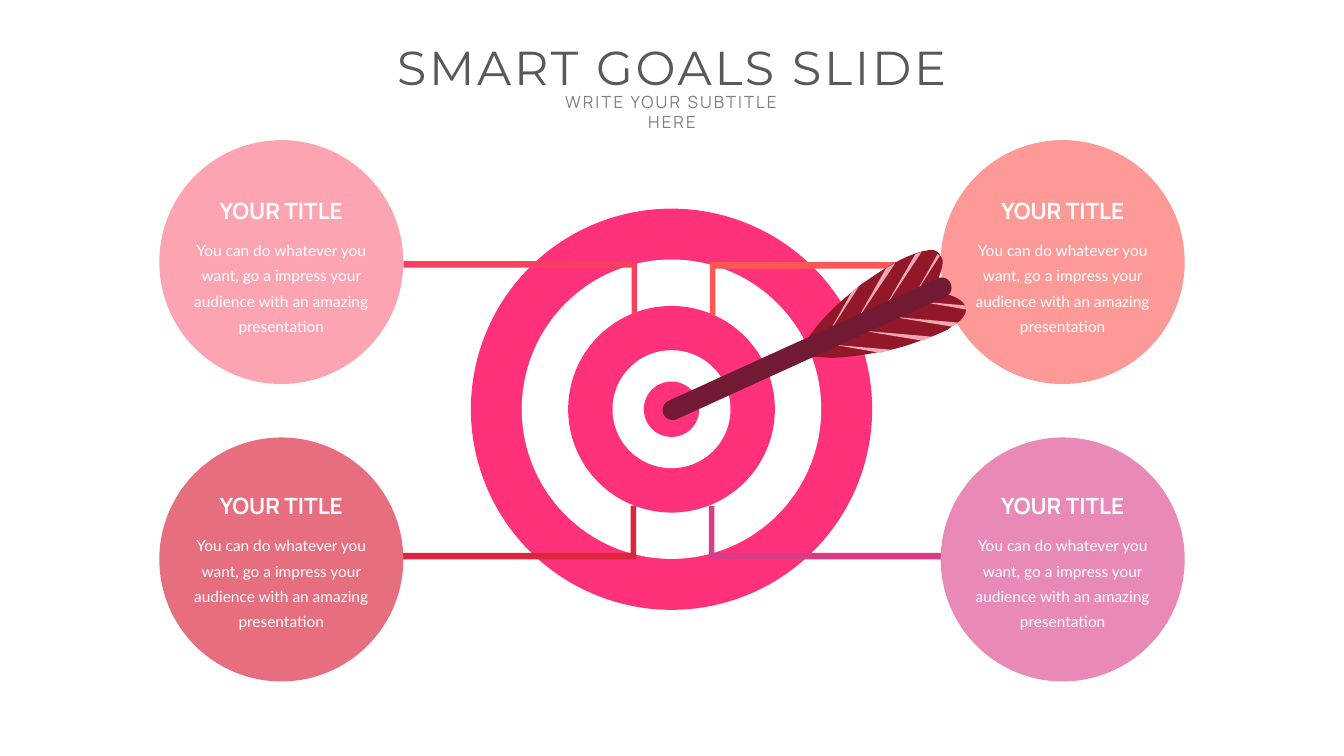
from pptx import Presentation
from pptx.dml.color import RGBColor
from pptx.enum.shapes import MSO_SHAPE as Shape
from pptx.enum.text import MSO_ANCHOR as Anchor, MSO_AUTO_SIZE as AutoSize, PP_ALIGN as Align
from pptx.oxml.ns import qn
from pptx.util import Inches, Pt

COLORS = {
    "white": "FFFFFF", "title": "595959", "subtitle": "808080", "target": "FF317B",
    "feather": "921829", "barb": "F1A8B2", "shaft": "721A34",
}
GOALS = [
    {"box": (1.58, 1.39, 2.42), "text_gap": 0.51, "fill": "FCA4B2",
     "link": (4, 2.59), "link_fill": "F93F5D", "rotation": 180, "flip": False},
    {"box": (9.33, 1.39, 2.42), "text_gap": 0.51, "fill": "FD9997",
     "link": (7.04, 2.6), "link_fill": "FC5755", "rotation": 0, "flip": True},
    {"box": (1.58, 4.34, 2.42), "text_gap": 0.49, "fill": "E76E7F",
     "link": (3.99, 5.02), "link_fill": "DB253E", "rotation": 180, "flip": True},
    {"box": (9.33, 4.34, 2.42), "text_gap": 0.49, "fill": "E989B7",
     "link": (7.03, 5.02), "link_fill": "DA3B87", "rotation": 0, "flip": False},
]
GOAL_TITLE = "YOUR TITLE"
GOAL_BODY = ("You can do whatever you want, go a impress your audience "
             "with an amazing presentation")
RINGS = [(3.98, "target"), (2.97, "white"), (2.05, "target"), (1.17, "white"), (0.55, "target")]

UPPER_FEATHER = [
    (2.85, 0.11), (2.84, 0.18, 2.81, 0.26, 2.81, 0.26), (2.63, 0.34), (1.49, 0.89),
    (1.62, 0.69, 1.78, 0.53, 1.95, 0.4), (2.03, 0.33),
    (2.13, 0.26, 2.22, 0.2, 2.3, 0.15), (2.39, 0.1),
    (2.48, 0.05, 2.54, 0.03, 2.54, 0.03), (2.59, 0.01), (2.66, -0.01),
    (2.68, -0.01, 2.71, -0.02, 2.73, -0.02), (2.77, -0.02, 2.79, -0.01, 2.81, 0.01),
    (2.83, 0.04), (2.84, 0.06, 2.85, 0.07, 2.85, 0.09),
]
LOWER_FEATHER = [
    (3.08, 0.57), (3.08, 0.61, 3.06, 0.65, 3, 0.7), (2.94, 0.74), (2.9, 0.77),
    (2.9, 0.77, 2.84, 0.8, 2.74, 0.84), (2.65, 0.87),
    (2.56, 0.91, 2.46, 0.94, 2.34, 0.97), (2.23, 0.99),
    (2.09, 1.02, 1.94, 1.04, 1.78, 1.05), (1.73, 1.05), (1.56, 1.04), (2.89, 0.42),
    (2.89, 0.42, 3.03, 0.45, 3.07, 0.53),
]
UPPER_BARBS = [
    [(2.57, 0.43), (2.82, 0.04), (2.8, 0.02)], [(2.27, 0.56), (2.64, 0), (2.58, 0.02)],
    [(1.99, 0.69), (2.38, 0.11), (2.29, 0.16)], [(1.71, 0.82), (2.02, 0.34), (1.94, 0.41)],
]
LOWER_BARBS = [
    [(2.62, 0.49), (3.07, 0.53), (3.08, 0.57)], [(2.33, 0.64), (3, 0.7), (2.94, 0.74)],
    [(2.05, 0.78), (2.74, 0.84), (2.65, 0.88)], [(1.77, 0.92), (2.34, 0.97), (2.23, 1)],
]


def paint(shape, color):
    shape.shadow.inherit = False
    shape.fill.solid()
    shape.fill.fore_color.rgb = RGBColor.from_string(color)
    shape.line.fill.background()


def add_filled(slide, kind, left, top, width, height, color):
    shape = slide.shapes.add_shape(
        kind, Inches(left), Inches(top), Inches(width), Inches(height))
    paint(shape, color)
    return shape


def place(shape, left, top, width, height):
    shape.left, shape.top = Inches(left), Inches(top)
    shape.width, shape.height = Inches(width), Inches(height)


def write(shape, text, font, size, color, bold=False, spacing=0, line_spacing=None,
          anchor=Anchor.TOP, wrap=True, margins=(0.1, 0.05)):
    frame = shape.text_frame
    frame.word_wrap = wrap
    frame.auto_size = AutoSize.NONE
    frame.vertical_anchor = anchor
    frame.margin_left = frame.margin_right = Inches(margins[0])
    frame.margin_top = frame.margin_bottom = Inches(margins[1])
    paragraph = frame.paragraphs[0]
    paragraph.alignment = Align.CENTER
    paragraph.space_before = Pt(0)
    if line_spacing:
        paragraph.line_spacing = Pt(line_spacing)
    run = paragraph.add_run()
    run.text = text
    run.font.name, run.font.size, run.font.bold = font, Pt(size), bold
    run.font.color.rgb = RGBColor.from_string(color)
    if spacing:
        run.font._element.set("spc", str(int(spacing * 100)))


def add_heading(slide, left, top, width):
    title, subtitle = slide.placeholders
    place(title, left, top, width, 0.67)
    write(title, "SMART GOALS SLIDE", "Montserrat", 34, COLORS["title"], spacing=2, wrap=False)
    place(subtitle, left + (width - 2.65) / 2, top + 0.53, 2.65, 0.5)
    write(subtitle, "WRITE YOUR SUBTITLE HERE", "Manrope", 12, COLORS["subtitle"], spacing=1.5)


def add_target(slide, center_x, center_y):
    for diameter, color in RINGS:
        add_filled(slide, Shape.OVAL, center_x - diameter / 2, center_y - diameter / 2,
                   diameter, diameter, COLORS[color])


def add_link(slide, left, top, color, rotation, flip):
    link = add_filled(slide, Shape.CORNER, left, top, 2.32, 0.53, color)
    link.adjustments[0], link.adjustments[1] = 0.122, 0.104
    link.rotation = rotation
    if flip:
        link.element.spPr.find(qn("a:xfrm")).set("flipV", "1")


def add_goal(slide, left, top, size, text_gap, color):
    add_filled(slide, Shape.OVAL, left, top, size, size, color)
    text_top = top + text_gap
    heading = slide.shapes.add_textbox(
        Inches(left + (size - 1.44) / 2), Inches(text_top), Inches(1.44), Inches(0.37))
    write(heading, GOAL_TITLE, "Manrope", 16, COLORS["white"], bold=True,
          anchor=Anchor.MIDDLE, wrap=False)
    body = slide.shapes.add_textbox(
        Inches(left + (size - 2.02) / 2), Inches(text_top + 0.39), Inches(2.02), Inches(1.03))
    write(body, GOAL_BODY, "Lato", 11, COLORS["white"], line_spacing=18.2, margins=(0.05, 0.03))


def flatten(outline, steps=8):
    points = [outline[0]]
    for segment in outline[1:]:
        if len(segment) == 2:
            points.append(segment)
            continue
        controls = [points[-1], segment[:2], segment[2:4], segment[4:]]
        for step in range(1, steps + 1):
            t = step / steps
            weights = ((1 - t) ** 3, 3 * t * (1 - t) ** 2, 3 * t ** 2 * (1 - t), t ** 3)
            points.append(tuple(sum(weight * control[axis] for weight, control
                                    in zip(weights, controls)) for axis in (0, 1)))
    return points


def add_outline(slide, left, top, outlines, color):
    contours = [[(Inches(left + x), Inches(top + y)) for x, y in flatten(outline)]
                for outline in outlines]
    builder = slide.shapes.build_freeform(*contours[0][0])
    for index, contour in enumerate(contours):
        if index:
            builder.move_to(*contour[0])
        builder.add_line_segments(contour[1:], close=True)
    paint(builder.convert_to_shape(), color)


def add_arrow(slide, left, top):
    for feather, barbs in ((UPPER_FEATHER, UPPER_BARBS), (LOWER_FEATHER, LOWER_BARBS)):
        add_outline(slide, left, top, [feather], COLORS["feather"])
        add_outline(slide, left, top, barbs, COLORS["barb"])
    shaft = add_filled(slide, Shape.ROUNDED_RECTANGLE, left - 0.06, top + 0.86, 3.13, 0.2,
                       COLORS["shaft"])
    shaft.adjustments[0] = 0.5
    shaft.rotation = 335.5


def main():
    presentation = Presentation()
    presentation.slide_width, presentation.slide_height = Inches(13.33), Inches(7.5)
    slide = presentation.slides.add_slide(presentation.slide_layouts[0])
    add_heading(slide, 3.74, 0.33, 5.85)
    add_target(slide, 6.66, 4.06)
    for goal in GOALS:
        add_link(slide, *goal["link"], goal["link_fill"], goal["rotation"], goal["flip"])
        add_goal(slide, *goal["box"], goal["text_gap"], goal["fill"])
    add_arrow(slide, 6.5, 2.5)
    presentation.save("out.pptx")


if __name__ == "__main__":
    main()
